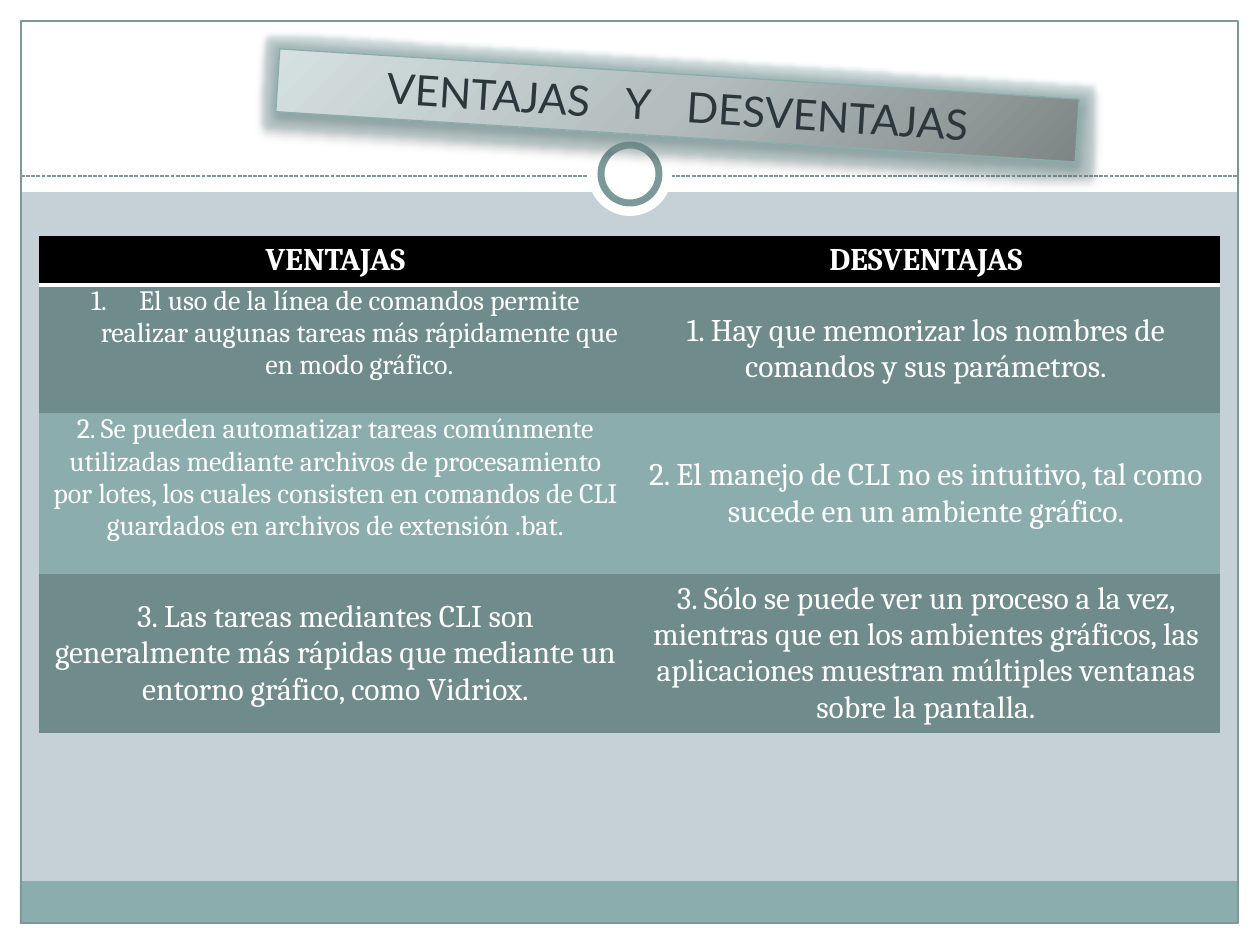
from pptx import Presentation, util as u
from pptx.dml.color import RGBColor
from pptx.enum import dml, shapes, text
from pptx.oxml import parse_xml
from pptx.oxml.ns import nsdecls, qn

PX_PER_INCH = 126
COLORS = {
    "background": "C5D1D7", "white": "FFFFFF", "black": "000000",
    "teal": "8CADAE", "slate": "708B8B", "frame": "7C999A",
    "title": "2A373D", "dark": "7E8585", "mid": "B3BDBD", "light": "D5E0E0",
}
NO_STYLE = "{2D5ABB26-0587-4C30-8999-92F81FD0307C}"
HEADERS = ("VENTAJAS", "DESVENTAJAS")
ROWS = [
    ("El uso de la línea de comandos permite realizar augunas tareas más "
     "rápidamente que en modo gráfico.",
     "1. Hay que memorizar los nombres de comandos y sus parámetros."),
    ("2. Se pueden automatizar tareas comúnmente utilizadas mediante archivos "
     "de procesamiento por lotes, los cuales consisten en comandos de CLI "
     "guardados en archivos de extensión .bat.",
     "2. El manejo de CLI no es intuitivo, tal como sucede en un ambiente "
     "gráfico."),
    ("3. Las tareas mediantes CLI son generalmente más rápidas que mediante un "
     "entorno gráfico, como Vidriox.",
     "3. Sólo se puede ver un proceso a la vez, mientras que en los ambientes "
     "gráficos, las aplicaciones muestran múltiples ventanas sobre la "
     "pantalla."),
]
COL_WIDTHS = (593, 588)
ROW_HEIGHTS = (49, 128, 161, 158)


def px(n):
    return u.Emu(round(n * 914400 / PX_PER_INCH))


def rgb(name):
    return RGBColor.from_string(COLORS[name])


def xml(source):
    return parse_xml(source.replace(">", f" {nsdecls('a')}>", 1))


def add_shape(slide, kind, box, fill=None, line=None, width=0.75):
    sp = slide.shapes.add_shape(kind, *map(px, box))
    sp.shadow.inherit = False
    if fill:
        sp.fill.solid()
        sp.fill.fore_color.rgb = rgb(fill)
    else:
        sp.fill.background()
    if line:
        sp.line.color.rgb = rgb(line)
        sp.line.width = u.Pt(width)
    else:
        sp.line.fill.background()
    return sp


def add_dashed_line(slide, x1, x2, y):
    line = slide.shapes.add_connector(
        shapes.MSO_CONNECTOR.STRAIGHT, px(x1), px(y), px(x2), px(y))
    line.line.color.rgb = rgb("frame")
    line.line.width = u.Pt(0.75)
    line.line.dash_style = dml.MSO_LINE.SQUARE_DOT
    line._element.spPr.append(xml("<a:effectLst></a:effectLst>"))


def add_frame(slide):
    rect, oval = shapes.MSO_SHAPE.RECTANGLE, shapes.MSO_SHAPE.OVAL
    for box in [(0, 924, 1260, 21), (0, 0, 1260, 192),
                (0, 0, 21, 945), (1239, 0, 21, 945)]:
        add_shape(slide, rect, box, "white")
    add_shape(slide, rect, (20, 881, 1218, 43), "teal")
    add_shape(slide, rect, (21, 21, 1217, 902), line="frame")
    add_dashed_line(slide, 21, 1239, 176)
    add_shape(slide, oval, (588, 132, 84, 84), "white")
    add_shape(slide, oval, (601, 145, 58, 58), "white", "frame", 4)


def format_run(r, size, font, color, bold=False):
    r.font.size = u.Pt(size)
    r.font.name = font
    r.font.color.rgb = rgb(color)
    r.font.bold = bold


def fill_cell(cell, content, fill, size=18, bold=False):
    cell.text = content
    cell.vertical_anchor = text.MSO_ANCHOR.MIDDLE
    cell.fill.solid()
    cell.fill.fore_color.rgb = rgb(fill)
    p = cell.text_frame.paragraphs[0]
    p.alignment = text.PP_ALIGN.CENTER
    format_run(p.runs[0], size, "Cambria", "white", bold)


def tighten(cell):
    """Narrow the margins and leave one line free below the text."""
    cell.margin_left = cell.margin_right = px(9)
    cell.margin_top = 0
    cell.margin_bottom = px(32)


def number(p):
    pPr = p._p.get_or_add_pPr()
    pPr.set("marL", str(px(48)))
    pPr.set("indent", str(-px(48)))
    pPr.append(xml('<a:buAutoNum type="arabicPeriod"></a:buAutoNum>'))


def add_comparison(slide):
    table = slide.shapes.add_table(
        len(ROW_HEIGHTS), len(COL_WIDTHS), px(39), px(236),
        px(sum(COL_WIDTHS)), px(sum(ROW_HEIGHTS))).table
    table._tbl.tblPr.find(qn("a:tableStyleId")).text = NO_STYLE
    for column, width in zip(table.columns, COL_WIDTHS):
        column.width = px(width)
    for row, height in zip(table.rows, ROW_HEIGHTS):
        row.height = px(height)
    for c, header in enumerate(HEADERS):
        cell = table.cell(0, c)
        fill_cell(cell, header, "black", bold=True)
        cell._tc.get_or_add_tcPr().insert(0, xml(
            f'<a:lnB w="{u.Pt(2)}"><a:solidFill>'
            f'<a:srgbClr val="{COLORS["white"]}"/></a:solidFill></a:lnB>'))
    for i, contents in enumerate(ROWS, 1):
        for c, content in enumerate(contents):
            compact = c == 0 and i < 3
            cell = table.cell(i, c)
            fill_cell(cell, content, "slate" if i % 2 else "teal",
                      16 if compact else 18)
            if compact:
                tighten(cell)
    number(table.cell(1, 0).text_frame.paragraphs[0])


def add_gradient(sp):
    """Radial gradient that spreads from the bottom right corner."""
    stops = "".join(
        f'<a:gs pos="{pos}"><a:srgbClr val="{COLORS[name]}"/></a:gs>'
        for pos, name in ((0, "dark"), (50000, "mid"), (100000, "light")))
    spPr = sp._element.spPr
    spPr.replace(spPr.find(qn("a:noFill")), xml(
        f'<a:gradFill rotWithShape="1"><a:gsLst>{stops}</a:gsLst>'
        '<a:path path="circle"><a:fillToRect l="100000" t="100000"/></a:path>'
        '</a:gradFill>'))


def add_glow_and_shadow(sp):
    spPr = sp._element.spPr
    spPr.replace(spPr.find(qn("a:effectLst")), xml(
        f'<a:effectLst><a:glow rad="{u.Pt(5)}">'
        f'<a:srgbClr val="{COLORS["teal"]}"><a:alpha val="40000"/></a:srgbClr>'
        f'</a:glow><a:outerShdw blurRad="{u.Pt(4)}" dist="{u.Pt(3)}" '
        f'dir="5400000" rotWithShape="0"><a:srgbClr val="{COLORS["black"]}">'
        '<a:alpha val="40000"/></a:srgbClr></a:outerShdw></a:effectLst>'))


def add_title(slide):
    sp = add_shape(slide, shapes.MSO_SHAPE.RECTANGLE, (277, 74, 801, 63),
                   line="teal")
    sp.rotation = 3.6
    add_gradient(sp)
    add_glow_and_shadow(sp)
    tf = sp.text_frame
    tf.word_wrap = True
    tf.auto_size = text.MSO_AUTO_SIZE.SHAPE_TO_FIT_TEXT
    p = tf.paragraphs[0]
    p.alignment = text.PP_ALIGN.CENTER
    for part in ("VENTAJAS", " ", "Y", " ", "DESVENTAJAS"):
        r = p.add_run()
        r.text = part
        format_run(r, 24, "Lato", "title")
        if part == " ":
            r._r.get_or_add_rPr().set("spc", "1400")


def main():
    prs = Presentation()
    prs.slide_width, prs.slide_height = px(1260), px(945)
    slide = prs.slides.add_slide(prs.slide_layouts[6])
    slide.background.fill.solid()
    slide.background.fill.fore_color.rgb = rgb("background")
    add_frame(slide)
    add_comparison(slide)
    add_title(slide)
    prs.save("out.pptx")


if __name__ == "__main__":
    main()
